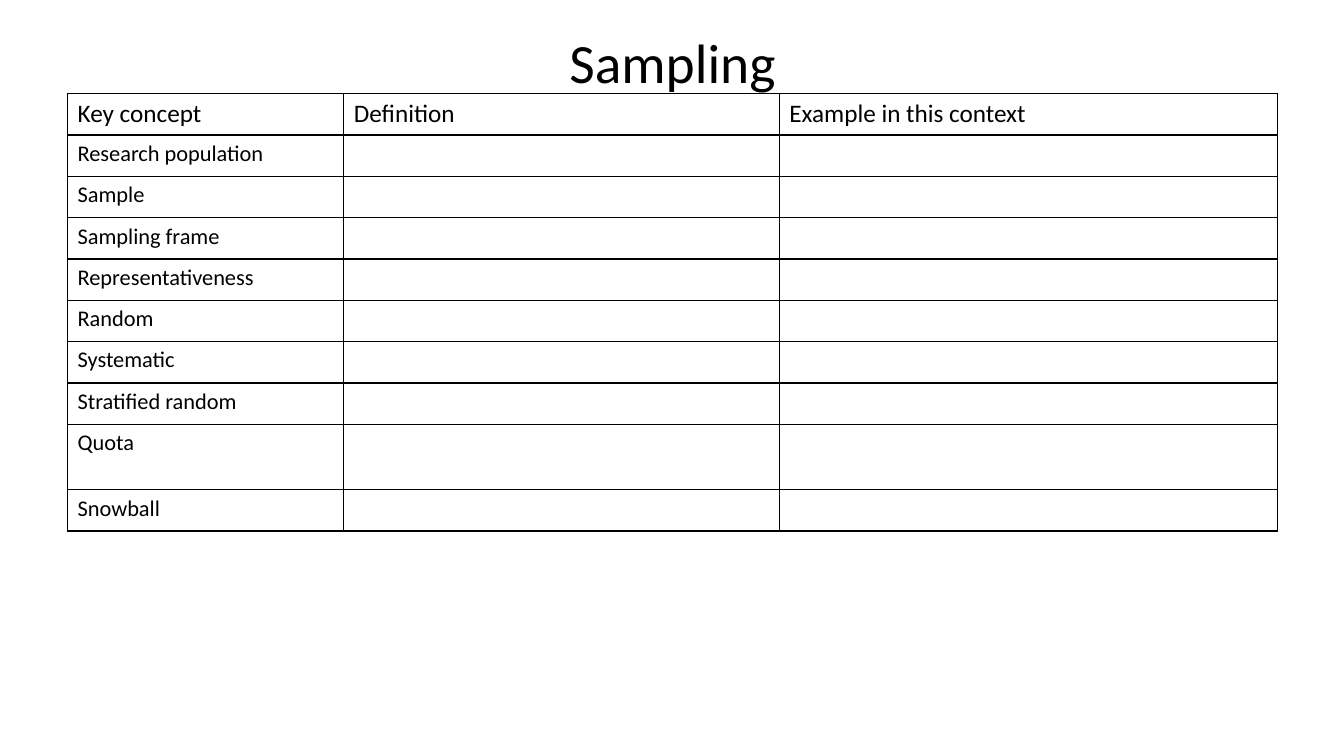
"""Build the Sampling slide: a title above a table of key concepts to fill in."""
import pptx
import pptx.dml.color
import pptx.enum.text
import pptx.oxml
import pptx.oxml.ns
import pptx.util
from pptx.util import Inches

COLOURS = {"ink": "000000", "paper": "FFFFFF"}
FONT = "Calibri"
HEADINGS = ["Key concept", "Definition", "Example in this context"]
CONCEPTS = [
    "Research population", "Sample", "Sampling frame", "Representativeness",
    "Random", "Systematic", "Stratified random", "Quota", "Snowball",
]
COLUMN_WIDTHS = [2.74, 4.32, 4.94]
ROW_HEIGHT = 0.41
TALL_ROWS = {"Quota": 0.65}


def colour(name):
    return pptx.dml.color.RGBColor.from_string(COLOURS[name])


def write(frame, text, size, **paragraph_format):
    paragraph = frame.paragraphs[0]
    paragraph.text = text
    for attribute, value in paragraph_format.items():
        setattr(paragraph, attribute, value)
    font_format = {"name": FONT, "size": pptx.util.Pt(size), "bold": False}
    for attribute, value in font_format.items():
        setattr(paragraph.font, attribute, value)
    paragraph.font.color.rgb = colour("ink")


def add_title(slide, text):
    title = slide.shapes.title
    place = {"left": 2.17, "top": 0.3, "width": 9, "height": 0.61}
    for attribute, value in place.items():
        setattr(title, attribute, Inches(value))
    frame_format = {
        "vertical_anchor": pptx.enum.text.MSO_ANCHOR.MIDDLE,
        "auto_size": pptx.enum.text.MSO_AUTO_SIZE.NONE,
        "word_wrap": True,
    }
    for attribute, value in frame_format.items():
        setattr(title.text_frame, attribute, value)
    write(title.text_frame, text, 39.6, alignment=pptx.enum.text.PP_ALIGN.CENTER)


def add_borders(cell):
    properties = cell._tc.get_or_add_tcPr()
    for side in ("lnL", "lnR", "lnT", "lnB"):
        properties.append(pptx.oxml.parse_xml(
            f'<a:{side} {pptx.oxml.ns.nsdecls("a")} w="{pptx.util.Pt(1)}">'
            f'<a:solidFill><a:srgbClr val="{COLOURS["ink"]}"/></a:solidFill>'
            f'</a:{side}>'
        ))


def add_concept_table(slide):
    rows = [HEADINGS] + [[concept, "", ""] for concept in CONCEPTS]
    heights = [TALL_ROWS.get(row[0], ROW_HEIGHT) for row in rows]
    table = slide.shapes.add_table(
        len(rows), len(HEADINGS), Inches(0.67), Inches(0.93),
        Inches(sum(COLUMN_WIDTHS)), Inches(sum(heights)),
    ).table
    for option in ("first_row", "horz_banding"):
        setattr(table, option, False)
    for column, width in zip(table.columns, COLUMN_WIDTHS):
        column.width = Inches(width)
    for row, height in zip(table.rows, heights):
        row.height = Inches(height)
    for row_number, row in enumerate(rows):
        for column_number, text in enumerate(row):
            cell = table.cell(row_number, column_number)
            add_borders(cell)
            cell.fill.solid()
            cell.fill.fore_color.rgb = colour("paper")
            write(cell.text_frame, text, 16 if row_number else 18)


def main():
    presentation = pptx.Presentation()
    presentation.slide_width = Inches(13.33)
    presentation.slide_height = Inches(7.5)
    slide = presentation.slides.add_slide(presentation.slide_layouts[5])
    add_title(slide, "Sampling")
    add_concept_table(slide)
    presentation.save("out.pptx")


if __name__ == "__main__":
    main()
